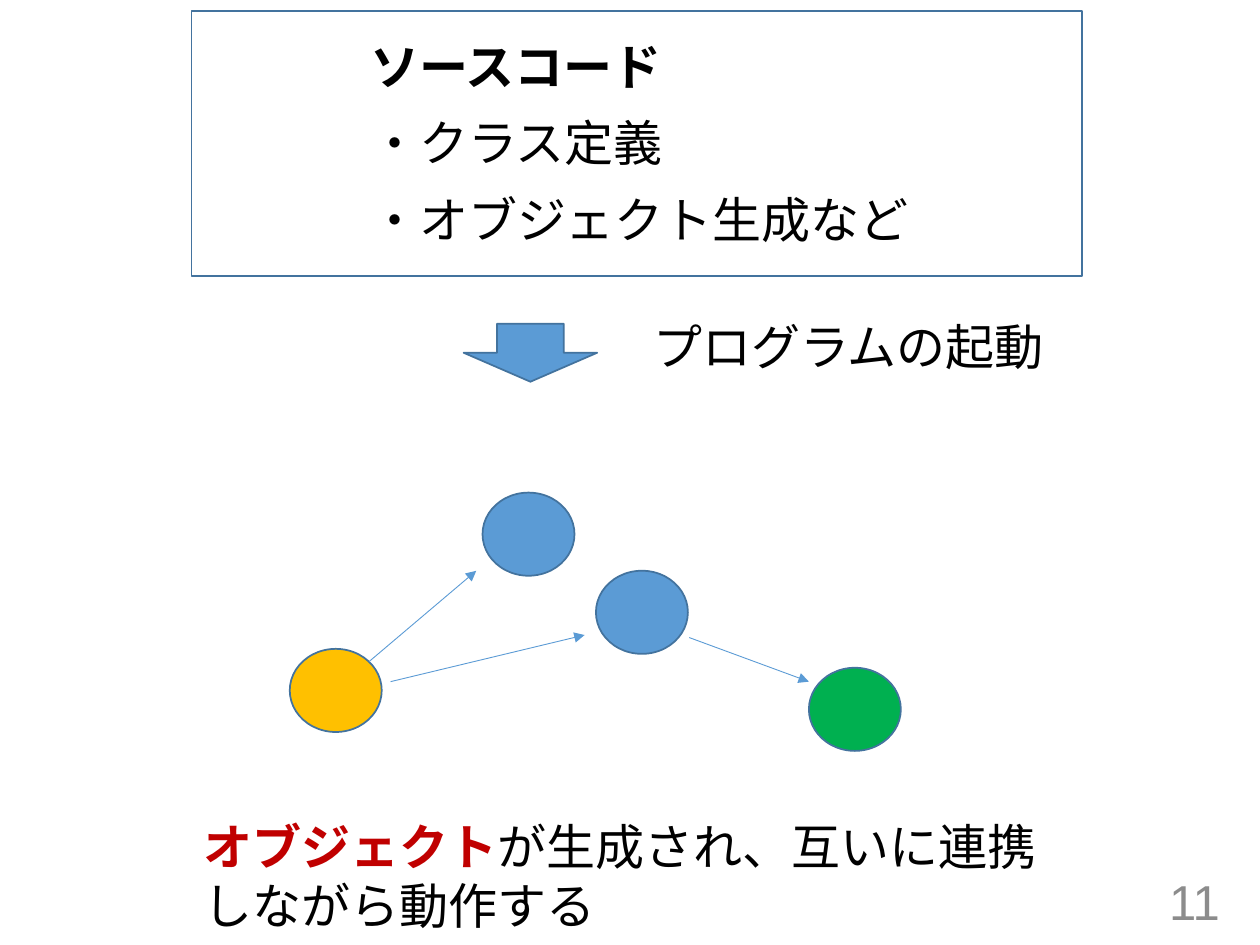
from dataclasses import dataclass

from lxml.etree import SubElement
from pptx import Presentation
from pptx.dml.color import RGBColor
from pptx.enum.shapes import MSO_CONNECTOR, MSO_SHAPE as SHAPE
from pptx.enum.text import MSO_ANCHOR as ANCHOR, PP_ALIGN as ALIGN
from pptx.oxml.ns import qn
from pptx.util import Pt

PX = 9144  # 100 px to the inch


@dataclass(frozen=True)
class Theme:
    text: str = "000000"
    muted: str = "8C8C8C"
    accent: str = "C00000"
    blue: str = "5B9BD5"
    outline: str = "43739E"
    yellow: str = "FFC000"
    green: str = "00B050"
    heading_font: str = "Arial"
    body_font: str = "Calibri"
    size: int = 28
    gap: int = 10
    border: float = 1
    arrow: float = 0.5


THEME = Theme()


def emu(*lengths):
    return [n * PX for n in lengths]


def rgb(value):
    return RGBColor.from_string(value)


def style_run(r, font, color=THEME.text, bold=False):
    r.font.name = font
    r.font.size = Pt(THEME.size)
    r.font.bold = bold
    r.font.color.rgb = rgb(color)
    SubElement(r._r.get_or_add_rPr(), qn("a:ea"), typeface=font)


def add_text(slide, x, y, w, h, text, font, color=THEME.text):
    tf = slide.shapes.add_textbox(*emu(x, y, w, h)).text_frame
    tf.word_wrap = True
    tf.text = text
    for p in tf.paragraphs:
        for r in p.runs:
            style_run(r, font, color)
    return tf


def add_outlined(slide, kind, x, y, w, h, fill=None):
    sp = slide.shapes.add_shape(kind, *emu(x, y, w, h))
    sp.shadow.inherit = False
    if fill:
        sp.fill.solid()
        sp.fill.fore_color.rgb = rgb(fill)
    else:
        sp.fill.background()
    sp.line.color.rgb = rgb(THEME.outline)
    sp.line.width = Pt(THEME.border)


def add_arrow(slide, x1, y1, x2, y2):
    s = slide.shapes.add_connector(MSO_CONNECTOR.STRAIGHT, *emu(x1, y1, x2, y2))
    s.line.color.rgb = rgb(THEME.blue)
    s.line.width = Pt(THEME.arrow)
    SubElement(s.line._get_or_add_ln(), qn("a:tailEnd"), type="triangle")
    SubElement(s._element.spPr, qn("a:effectLst"))


def source_code_panel(slide, x, y, w, h):
    lines = ["ソースコード", "・クラス定義", "・オブジェクト生成など"]
    tf = add_text(slide, x + 132, y + 15, 465, h - 15, "\n".join(lines),
                  THEME.heading_font)
    tf.paragraphs[0].runs[0].font.bold = True
    for p in tf.paragraphs[1:]:
        p.space_before = Pt(THEME.gap)
    add_outlined(slide, SHAPE.RECTANGLE, x, y, w, h)


def launch_step(slide, x, y, w, h):
    add_outlined(slide, SHAPE.DOWN_ARROW, x, y + 11, 106, h - 11, THEME.blue)
    add_text(slide, x + 141, y, w - 141, h, "プログラムの起動", THEME.body_font)


def object_graph(slide, x, y):
    """Draw the objects and the messages between them."""
    objects = [
        (153, 0, THEME.blue),
        (243, 62, THEME.blue),
        (0, 124, THEME.yellow),
        (412, 139, THEME.green),
    ]
    messages = [
        (63, 134, 148, 62),
        (80, 150, 234, 113),
        (317, 115, 412, 150),
    ]
    for dx, dy, fill in objects:
        add_outlined(slide, SHAPE.OVAL, x + dx, y + dy, 73, 66, fill)
    for x1, y1, x2, y2 in messages:
        add_arrow(slide, x + x1, y + y1, x + x2, y + y2)


def conclusion(slide, x, y, w, h):
    tf = add_text(slide, x, y, w, h, "オブジェクト", THEME.body_font, THEME.accent)
    p = tf.paragraphs[0]
    p.runs[0].font.bold = True
    r = p.add_run()
    r.text = "が生成され、互いに連携しながら動作する"
    style_run(r, THEME.body_font)


def page_number(slide, x, y, w, h):
    tf = add_text(slide, x, y, w, h, "11", THEME.heading_font, THEME.muted)
    tf.vertical_anchor = ANCHOR.MIDDLE
    tf.paragraphs[0].alignment = ALIGN.RIGHT


def main():
    prs = Presentation()
    prs.slide_width, prs.slide_height = emu(1000, 750)
    slide = prs.slides.add_slide(prs.slide_layouts[6])
    source_code_panel(slide, 152, 9, 707, 210)
    launch_step(slide, 368, 246, 498, 57)
    object_graph(slide, 230, 391)
    conclusion(slide, 152, 643, 696, 104)
    page_number(slide, 753, 695, 225, 40)
    prs.save("out.pptx")


if __name__ == "__main__":
    main()
